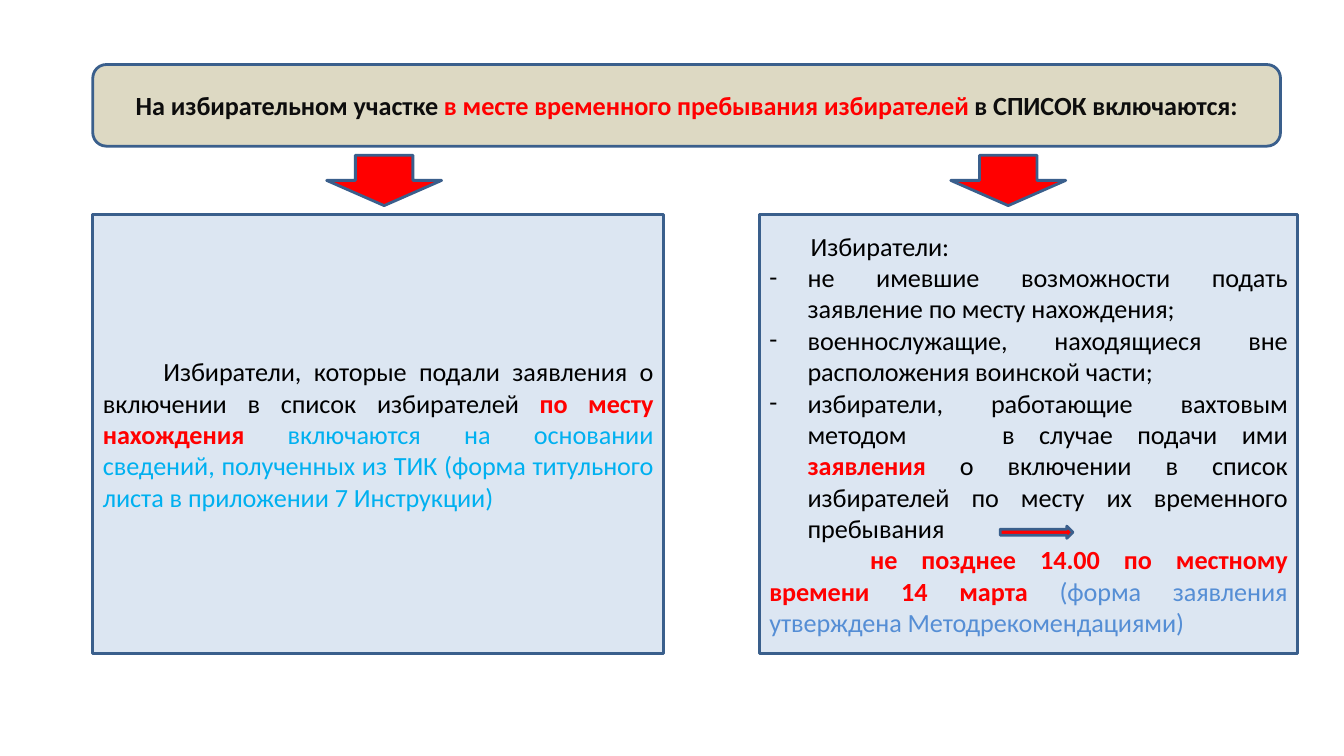
"""Build a slide on who is entered in the voter list at a temporary polling station."""
from lxml.etree import SubElement
from pptx import Presentation
from pptx.dml.color import RGBColor
from pptx.enum.shapes import MSO_SHAPE
from pptx.enum.text import MSO_ANCHOR, MSO_AUTO_SIZE, PP_ALIGN
from pptx.oxml.ns import qn
from pptx.util import Inches, Pt

BLACK = RGBColor(0x00, 0x00, 0x00)
INK = RGBColor(0x0D, 0x0D, 0x0D)
RED = RGBColor(0xFF, 0x00, 0x00)
SKY = RGBColor(0x00, 0xB0, 0xF0)
BLUE = RGBColor(0x55, 0x8E, 0xD5)
BORDER = RGBColor(0x3A, 0x5F, 0x8C)
BEIGE = RGBColor(0xDD, 0xD9, 0xC3)
PALE = RGBColor(0xDC, 0xE6, 0xF2)

FONT = {"name": "Calibri", "size": Pt(18.67)}
FRAME = {"word_wrap": True, "auto_size": MSO_AUTO_SIZE.NONE,
         "vertical_anchor": MSO_ANCHOR.MIDDLE}
HANG = 0.38
BANNER = (0.92, 0.64, 11.78, 0.81)

TITLE = [("На избирательном участке ", INK, True),
         ("в месте временного пребывания избирателей ", RED, True),
         ("в СПИСОК включаются:", INK, True)]

LEFT = [
    {"first": 0.6, "runs": [
        ("Избиратели, которые подали заявления о включении в список избирателей ", BLACK, False),
        ("по месту нахождения ", RED, True),
        ("включаются на основании сведений, полученных из ТИК "
         "(форма титульного листа в приложении 7 Инструкции)", SKY, False)]},
]

RIGHT = [
    {"first": 0.41, "runs": [("Избиратели:", BLACK, False)]},
    {"bullet": "-", "runs": [
        ("не имевшие возможности подать заявление по месту нахождения;", BLACK, False)]},
    {"bullet": "-", "runs": [
        ("военнослужащие, находящиеся вне расположения воинской части;", BLACK, False)]},
    {"bullet": "-", "tab": 2.31, "runs": [
        ("избиратели, работающие вахтовым методом\tв случае подачи ими ", BLACK, False),
        ("заявления", RED, True),
        (" о включении в список избирателей по месту их временного пребывания", BLACK, False)]},
    {"first": 1, "runs": [
        ("не позднее 14.00 по местному времени 14 марта ", RED, True),
        ("(форма заявления утверждена Методрекомендациями)", BLUE, False)]},
]


def set_attrs(obj, values):
    for name, value in values.items():
        setattr(obj, name, value)


def place(sp, box):
    names = ("left", "top", "width", "height")
    set_attrs(sp, dict(zip(names, map(Inches, box))))


def paint(sp, fill):
    sp.fill.solid()
    sp.fill.fore_color.rgb = fill
    sp.line.color.rgb = BORDER
    sp.line.width = Pt(2)


def add_block(s, kind, box, fill):
    sp = s.shapes.add_shape(kind, *map(Inches, box))
    sp.shadow.inherit = False
    paint(sp, fill)
    return sp


def add_runs(p, runs, align):
    set_attrs(p, {"alignment": align, "space_before": Pt(0)})
    for text, color, bold in runs:
        r = p.add_run()
        r.text = text
        set_attrs(r.font, {**FONT, "bold": bold})
        r.font.color.rgb = color


def set_indent(p, first=0, bullet=None, tab=None):
    pPr = p._p.get_or_add_pPr()
    left, indent = (HANG, -HANG) if bullet else (0, first)
    pPr.set("marL", str(Inches(left)))
    pPr.set("indent", str(Inches(indent)))
    if bullet:
        SubElement(pPr, qn("a:buFont"), typeface=FONT["name"])
        SubElement(pPr, qn("a:buChar"), char=bullet)
    else:
        SubElement(pPr, qn("a:buNone"))
    if tab:
        tabs = SubElement(pPr, qn("a:tabLst"))
        SubElement(tabs, qn("a:tab"), pos=str(Inches(tab)), algn="l")


def fill_title(s):
    title = s.shapes.title
    place(title, BANNER)
    set_attrs(title.text_frame, FRAME)
    add_runs(title.text_frame.paragraphs[0], TITLE, PP_ALIGN.CENTER)
    banner = add_block(s, MSO_SHAPE.ROUNDED_RECTANGLE, BANNER, BEIGE)
    title.element.addprevious(banner.element)


def fill_panel(sp, box, paragraphs):
    place(sp, box)
    paint(sp, PALE)
    tf = sp.text_frame
    set_attrs(tf, FRAME)
    for i, item in enumerate(paragraphs):
        p = tf.add_paragraph() if i else tf.paragraphs[0]
        layout = {key: value for key, value in item.items() if key != "runs"}
        set_indent(p, **layout)
        add_runs(p, item["runs"], PP_ALIGN.JUSTIFY)


def main():
    prs = Presentation()
    set_attrs(prs, {"slide_width": Inches(13.33), "slide_height": Inches(7.5)})
    s = prs.slides.add_slide(prs.slide_layouts[3])
    fill_title(s)
    fill_panel(s.placeholders[1], (0.92, 2.13, 5.66, 4.35), LEFT)
    fill_panel(s.placeholders[2], (7.53, 2.13, 5.34, 4.35), RIGHT)
    for left in (3.24, 9.43):
        add_block(s, MSO_SHAPE.DOWN_ARROW, (left, 1.54, 1.14, 0.5), RED)
    add_block(s, MSO_SHAPE.RIGHT_ARROW, (9.92, 5.22, 0.72, 0.12), RED)
    prs.save("out.pptx")


if __name__ == "__main__":
    main()
